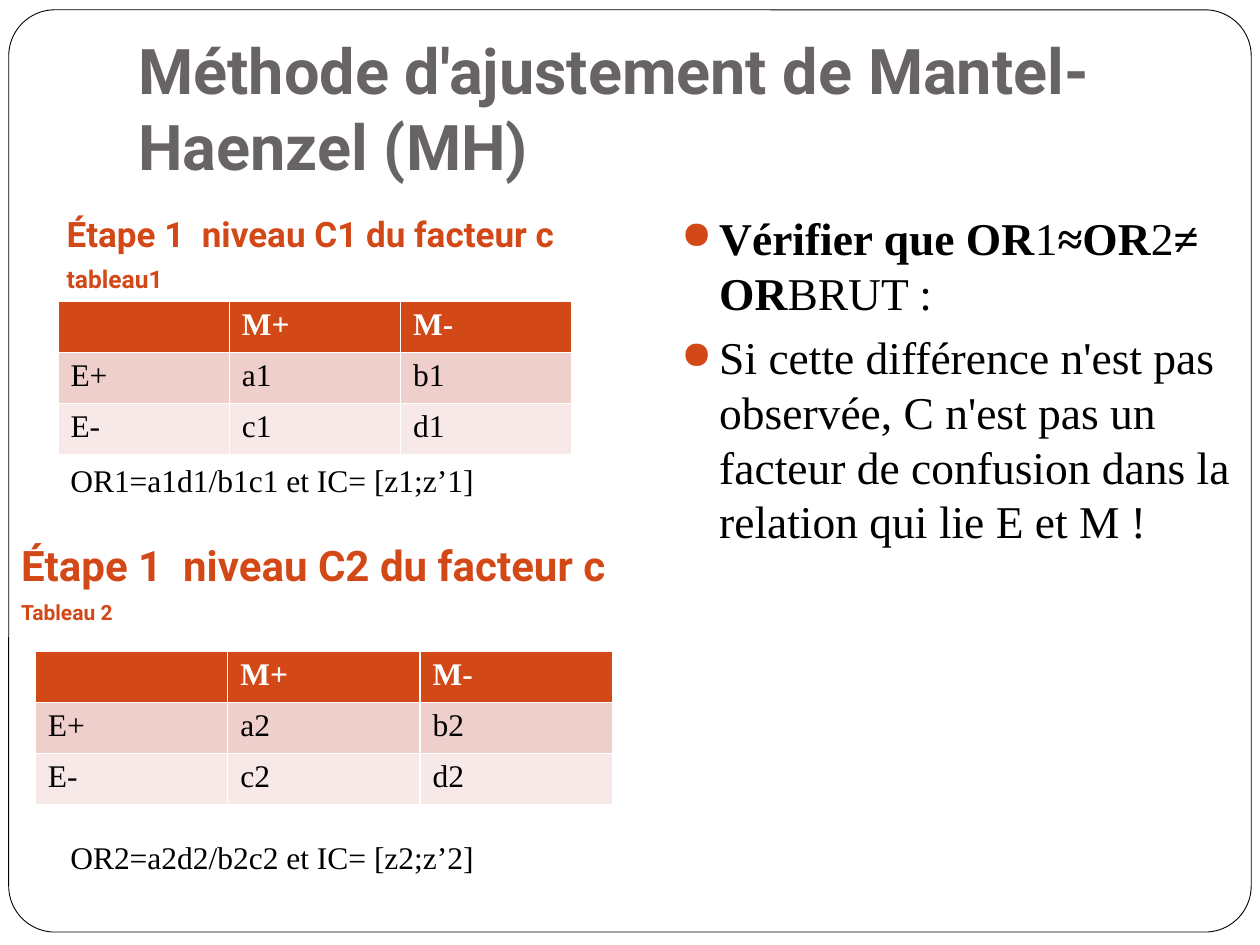
from lxml import etree
from pptx import Presentation
from pptx.dml.color import RGBColor
from pptx.enum import shapes, text
from pptx.oxml import ns
from pptx.util import Pt

COLOURS = {
    "accent": "D34817", "title": "696464", "ink": "000000", "paper": "FFFFFF",
    "band_dark": "EFCFCC", "band_light": "F7E9E8",
}
HEADING, BODY = "Roboto", "Times New Roman"


class SlideBuilder:
    """Hold the style and the current slide, and add each kind of element."""

    def __init__(self, page):
        self.page = page

    def colour(self, name):
        return RGBColor.from_string(COLOURS[name])

    def style(self, span, size, font, colour, bold=False):
        span.font.size = Pt(size)
        span.font.name = font
        span.font.bold = bold
        span.font.color.rgb = self.colour(colour)

    def frame(self, left, top, width, height, radius):
        box = self.page.shapes.add_shape(
            shapes.MSO_SHAPE.ROUNDED_RECTANGLE, Pt(left), Pt(top), Pt(width), Pt(height))
        box.adjustments[0] = radius
        box.shadow.inherit = False
        box.fill.solid()
        box.fill.fore_color.rgb = self.colour("paper")
        box.line.color.rgb = self.colour("ink")
        box.line.width = Pt(0.5)

    def text_box(self, left, top, width, height, anchor=text.MSO_ANCHOR.TOP):
        box = self.page.shapes.add_textbox(Pt(left), Pt(top), Pt(width), Pt(height))
        box.text_frame.word_wrap = True
        box.text_frame.vertical_anchor = anchor
        return box.text_frame

    def lines(self, frame, contents, sizes, font, colour, bold=False, before=0):
        frame.text = "\n".join(contents)
        for para, size in zip(frame.paragraphs, sizes):
            para.space_before = Pt(before)
            self.style(para.runs[0], size, font, colour, bold)

    def title(self, content):
        frame = self.text_box(72, 21.6, 612, 90, text.MSO_ANCHOR.BOTTOM)
        frame.margin_bottom = Pt(7.2)
        self.lines(frame, [content], [36], HEADING, "title", True)

    def heading(self, left, top, width, height, contents, sizes):
        frame = self.text_box(left, top, width, height, text.MSO_ANCHOR.BOTTOM)
        self.lines(frame, contents, sizes, HEADING, "accent", True, 5.8)

    def formula(self, top, content):
        frame = self.text_box(33.1, top, 249, 29)
        self.lines(frame, [content], [18], BODY, "ink")

    def table(self, left, top, width, rows):
        height = 29.2
        grid = self.page.shapes.add_table(
            len(rows), len(rows[0]), Pt(left), Pt(top), Pt(width), Pt(height * len(rows))).table
        fills = ["accent", "band_dark", "band_light"]
        for row, values, fill in zip(grid.rows, rows, fills):
            row.height = Pt(height)
            header = fill == "accent"
            for cell, value in zip(row.cells, values):
                cell.fill.solid()
                cell.fill.fore_color.rgb = self.colour(fill)
                cell.text_frame.text = value
                for span in cell.text_frame.paragraphs[0].runs:
                    self.style(span, 18, BODY, "paper" if header else "ink", header)

    def bullet(self, para):
        props = para._p.get_or_add_pPr()
        props.set("marL", str(Pt(21.6)))
        props.set("indent", str(-Pt(21.6)))
        tint = etree.SubElement(props, ns.qn("a:buClr"))
        etree.SubElement(tint, ns.qn("a:srgbClr"), val=COLOURS["accent"])
        etree.SubElement(props, ns.qn("a:buSzPct"), val="85000")
        etree.SubElement(props, ns.qn("a:buChar"), char="●")

    def bullets(self, left, top, width, height, items):
        frame = self.text_box(left, top, width, height)
        for index, spans in enumerate(items):
            para = frame.add_paragraph() if index else frame.paragraphs[0]
            para.space_before = Pt(5.8)
            self.bullet(para)
            for content, bold in spans:
                span = para.add_run()
                span.text = content
                self.style(span, 26, BODY, "ink", bold)


def contingency(level):
    return [["", "M+", "M-"],
            ["E+", f"a{level}", f"b{level}"],
            ["E-", f"c{level}", f"d{level}"]]


def main():
    deck = Presentation()
    deck.slide_width, deck.slide_height = Pt(720), Pt(540)
    slide = SlideBuilder(deck.slides.add_slide(deck.slide_layouts[6]))

    slide.frame(5, 5.6, 710, 527, 0.05)
    slide.title("Méthode d'ajustement de Mantel-Haenzel (MH)")
    slide.heading(31, 111.6, 293.8, 59.8,
                  ["Étape 1  niveau C1 du facteur c", "tableau1"], [20, 14])
    slide.table(33.1, 172.1, 293.8, contingency(1))
    slide.table(20.2, 372.2, 329.8, contingency(2))
    slide.bullets(382.3, 116.6, 329.8, 388, [
        [("Vérifier que OR", True), ("1", False), ("≈OR", True), ("2", False),
         ("≠ OR", True), ("BRUT :", False)],
        [("Si cette différence n'est pas observée, C n'est pas un facteur de "
          "confusion dans la relation qui lie E et M !", False)],
    ])
    slide.heading(5, 298.1, 351.4, 62.6,
                  ["Étape 1  niveau C2 du facteur c", "Tableau 2"], [24, 12])
    for level, top in [(1, 260), (2, 475.2)]:
        slide.formula(top, f"OR{level}=a{level}d{level}/b{level}c{level} et IC= [z{level};z’{level}]")
    deck.save("out.pptx")


if __name__ == "__main__":
    main()
